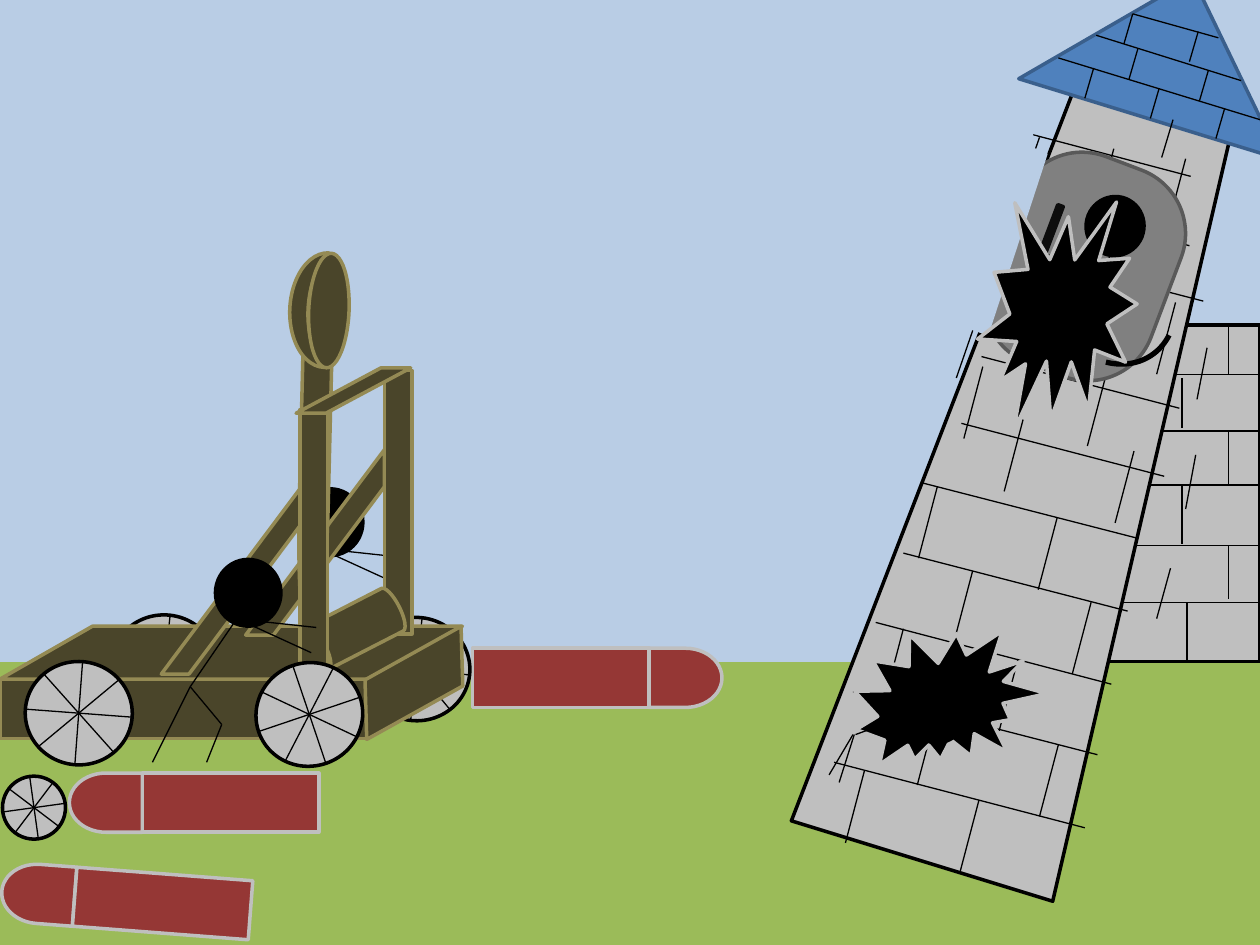
from math import cos, radians, sin

from lxml.etree import SubElement
from pptx import Presentation
from pptx.dml.color import RGBColor
from pptx.enum.shapes import MSO_CONNECTOR, MSO_SHAPE
from pptx.oxml.ns import qn
from pptx.util import Cm, Pt

COLOURS = {
    "grass": "9BBB59", "sky": "B9CDE5", "stone": "BFBFBF", "black": "000000",
    "red": "953735", "wood": "4A452A", "wood edge": "948A54",
    "roof": "4F81BD", "roof edge": "3A5F8C",
    "window": "808080", "window edge": "595959", "bar": "0D0D0D",
}

# All coordinates are in inches.
WALL_COURSES = [(8.65, 2.97), (8.65, 3.42), (8.7, 3.85), (8.7, 4.33), (8.79, 4.78)]
WALL_JOINTS = [(9.75, 2.58, 2.97), (9.38, 3, 3.4), (9.75, 3.42, 3.86),
               (9.38, 3.85, 4.32), (9.75, 4.33, 4.75), (9.42, 4.78, 5.25)]
ROOF_COURSES = [(8.4, 0.46, 10, 0.95), (8.7, 0.28, 9.85, 0.64), (8.99, 0.11, 9.67, 0.3)]
ROOF_JOINTS = [(8.68, 0.54), (9.2, 0.7), (9.72, 0.86), (9.03, 0.39),
               (9.59, 0.56), (8.99, 0.11), (9.51, 0.25)]
TOWER_COURSES = [
    (6.62, 6.05, 8.61, 6.57), (6.77, 5.49, 8.71, 5.99), (6.95, 4.94, 8.82, 5.43),
    (7.17, 4.39, 8.95, 4.85), (7.31, 3.83, 9.02, 4.27), (7.63, 3.36, 9.24, 3.78),
    (8.2, 1.07, 9.45, 1.4)]
UPPER_COURSES = [(7.59, 3, 8.25, 1.09), (7.79, 2.83, 9.36, 3.24),
                 (8.05, 2, 9.55, 2.39), (8.19, 1.62, 9.44, 1.95)]
TOWER_JOINTS = [
    (6.86, 6.12), (7.77, 6.35), (8.4, 5.91), (8.08, 5.23), (8.66, 4.78), (8.39, 4.11),
    (9, 3.58), (8.78, 2.97), (9.33, 2.4), (8.97, 1.84), (9.41, 1.26), (7.43, 5.66),
    (7.17, 4.99), (7.72, 4.53), (7.44, 3.86), (8.12, 3.33), (7.8, 2.91), (8.84, 1.18)]
CRACKS = [(9.31, 0.95, 9.22, 1.25), (9.29, 4.51, 9.18, 4.91),
          (9.49, 3.61, 9.41, 4.04), (9.58, 2.76, 9.5, 3.17)]
CAPTIVE_LIMBS = [(8.34, 2.81, 8.62, 2.47), (8.66, 2.93, 8.65, 2.48),
                 (8.65, 2.47, 8.82, 2), (8.3, 2.2, 8.69, 2.05), (8.71, 2.03, 8.79, 2.35)]
CAPTIVE_ARMS = [(8.44, 2.23, 8.79, 2.35), (8.47, 1.81, 8.44, 2.23), (8.46, 2.18, 8.42, 2.62)]
FALLEN_LIMBS = [(7.2, 5.68, 6.79, 5.83), (6.77, 5.83, 6.58, 6.15), (6.78, 5.83, 6.66, 6.21)]
SOLDIER_LIMBS = [(0, 0, -0.3, 0.6), (0, 0, 0.25, 0.3), (0.25, 0.3, 0.13, 0.6),
                 (0, 0, 0.37, -0.54), (0.37, -0.54, 0.96, -0.27), (0.35, -0.54, 1, -0.47)]


def colour(name):
    return RGBColor.from_string(COLOURS[name])


def length(inches):
    return Cm(inches * 2.54)


def add_shape(slide, kind, box, fill, edge, rotation=0, adjustments=(), weight=2):
    """Add a preset shape; a fill of None leaves it open."""
    shape = slide.shapes.add_shape(kind, *map(length, box))
    shape.shadow.inherit = False
    shape.rotation = rotation
    for index, value in enumerate(adjustments):
        shape.adjustments[index] = value
    if fill:
        shape.fill.solid()
        shape.fill.fore_color.rgb = colour(fill)
    else:
        shape.fill.background()
    shape.line.color.rgb = colour(edge)
    shape.line.width = Pt(weight)
    return shape


def add_wood(slide, kind, box, rotation=0, adjustments=()):
    add_shape(slide, kind, box, "wood", "wood edge", rotation, adjustments)


def add_lines(slide, segments):
    for segment in segments:
        line = slide.shapes.add_connector(MSO_CONNECTOR.STRAIGHT, *map(length, segment))
        line.line.color.rgb = colour("black")
        line.line.width = Pt(0.75)
        SubElement(line._element.spPr, qn("a:effectLst"))


def add_joints(slide, starts, dx, dy):
    """Add parallel joints of one length."""
    add_lines(slide, [(x, y, x + dx, y + dy) for x, y in starts])


def add_wheel(slide, left, top, width, height, rotation):
    add_shape(slide, MSO_SHAPE.OVAL, (left, top, width, height), "stone", "black", rotation)
    centre_x, centre_y, turn = left + width / 2, top + height / 2, radians(rotation)
    for angle in map(radians, (0, 45, 90, 135)):
        x, y = width / 2 * cos(angle), height / 2 * sin(angle)
        dx, dy = x * cos(turn) - y * sin(turn), x * sin(turn) + y * cos(turn)
        add_lines(slide, [(centre_x - dx, centre_y - dy, centre_x + dx, centre_y + dy)])


def add_rocket(slide, x, y, rotation):
    """Add a rocket whose body is centred on x, y."""
    nose_x = x + 0.99 * cos(radians(rotation))
    nose_y = y + 0.99 * sin(radians(rotation))
    for kind, centre_x, centre_y, width in (
            (MSO_SHAPE.FLOWCHART_DELAY, nose_x, nose_y, 0.58),
            (MSO_SHAPE.RECTANGLE, x, y, 1.4)):
        box = (centre_x - width / 2, centre_y - 0.235, width, 0.47)
        add_shape(slide, kind, box, "red", "stone", rotation)


def add_soldier(slide, x, y):
    """Add a stick figure with its hip at x, y."""
    add_lines(slide, [(x + x1, y + y1, x + x2, y + y2) for x1, y1, x2, y2 in SOLDIER_LIMBS])
    add_shape(slide, MSO_SHAPE.OVAL, (x + 0.2, y - 1.01, 0.52, 0.53), "black", "black")


def add_post(slide, x, y):
    """Add an upright post with its slanting brace."""
    add_wood(slide, MSO_SHAPE.DIAGONAL_STRIPE, (x - 1.1, y + 0.63, 1.1, 1.47), 180, [0.8])
    add_wood(slide, MSO_SHAPE.FLOWCHART_PROCESS, (x, y, 0.22, 2.09))


def add_landscape(slide):
    add_shape(slide, MSO_SHAPE.RECTANGLE, (0, 5.25, 10, 2.25), "grass", "grass")
    add_shape(slide, MSO_SHAPE.RECTANGLE, (0, 0, 10, 5.24), "sky", "sky")
    add_shape(slide, MSO_SHAPE.FLOWCHART_PROCESS, (8, 2.58, 2, 2.67), "stone", "black")
    add_lines(slide, [(x, y, 10, y) for x, y in WALL_COURSES])
    add_lines(slide, [(x, top, x, bottom) for x, top, bottom in WALL_JOINTS])


def add_catapult(slide):
    add_soldier(slide, 2.16, 4.89)
    add_wheel(slide, 2.88, 4.9, 0.85, 0.82, 186.4)
    add_wheel(slide, 0.88, 4.88, 0.85, 0.82, 186.4)
    add_wood(slide, MSO_SHAPE.FLOWCHART_PROCESS, (0, 5.39, 2.92, 0.47))
    add_wood(slide, MSO_SHAPE.FLOWCHART_DATA, (0, 4.97, 3.67, 0.42))
    add_wood(slide, MSO_SHAPE.FLOWCHART_DATA, (2.74, 5.21, 1.09, 0.42), 150.9)
    add_post(slide, 3.05, 2.94)
    add_wheel(slide, 0.2, 5.25, 0.85, 0.82, 184.3)
    add_wood(slide, MSO_SHAPE.FLOWCHART_DELAY, (1.32, 3.88, 2.34, 0.23), 91.4)
    add_wood(slide, MSO_SHAPE.MOON, (2.3, 2, 0.29, 0.91), 2.5)
    add_wood(slide, MSO_SHAPE.OVAL, (2.45, 2.01, 0.32, 0.91), 2.5)
    add_wood(slide, MSO_SHAPE.CAN, (2.63, 4.6, 0.38, 0.78), 242.8, [0.31])
    add_post(slide, 2.38, 3.25)
    add_wheel(slide, 2.03, 5.26, 0.85, 0.82, 161.3)
    add_soldier(slide, 1.51, 5.45)
    add_wood(slide, MSO_SHAPE.PARALLELOGRAM, (2.35, 2.92, 0.91, 0.36), 0, [1.87])


def add_tower(slide):
    add_shape(slide, MSO_SHAPE.FLOWCHART_MANUAL_OPERATION, (7.14, 0.8, 2.17, 6.17),
              "stone", "black", 197.1)
    add_shape(slide, MSO_SHAPE.FLOWCHART_EXTRACT, (8.21, -0.2, 2.17, 1.17),
              "roof", "roof edge", 17.1)
    add_lines(slide, ROOF_COURSES)
    add_joints(slide, ROOF_JOINTS, -0.07, 0.24)
    add_lines(slide, TOWER_COURSES)
    add_shape(slide, MSO_SHAPE.RECTANGLE, (7.6, 1, 0.33, 2), "sky", "sky", 18.6)
    add_lines(slide, UPPER_COURSES)
    add_joints(slide, TOWER_JOINTS, -0.15, 0.57)


def add_window_and_damage(slide):
    add_shape(slide, MSO_SHAPE.ROUNDED_RECTANGLE, (7.92, 1.24, 1.38, 1.75),
              "window", "window edge", 20.7, [0.39])
    add_shape(slide, MSO_SHAPE.MATH_PLUS, (8.12, 1.45, 0.29, 1.17), "bar", "bar", 20.7, [0.16])
    add_lines(slide, CRACKS + CAPTIVE_LIMBS)
    add_shape(slide, MSO_SHAPE.FLOWCHART_CONNECTOR, (8.62, 1.56, 0.46, 0.47),
              "black", "black", 14.6)
    add_shape(slide, MSO_SHAPE.RECTANGLE, (7.61, 1.11, 0.47, 1.5), "sky", "sky", 18.1)
    # Arc angles are 60000ths of a degree; adjustments count in 100000ths.
    add_shape(slide, MSO_SHAPE.ARC, (8.2, 1.82, 1.21, 0.99), None, "black", 237.3,
              [158.8 * 0.6, 215.58 * 0.6], 3)
    add_shape(slide, MSO_SHAPE.EXPLOSION2, (6.79, 4.92, 1.48, 1.27), "black", "stone", 14.6)
    add_lines(slide, CAPTIVE_ARMS)
    add_shape(slide, MSO_SHAPE.OVAL, (7.17, 5.4, 0.52, 0.47), "black", "black", 78.2)
    add_lines(slide, FALLEN_LIMBS)
    add_shape(slide, MSO_SHAPE.EXPLOSION1, (7.82, 1.52, 1.19, 1.97), "black", "stone", 14.6)


def main():
    presentation = Presentation()
    presentation.slide_width, presentation.slide_height = Cm(25.4), Cm(19.05)
    slide = presentation.slides.add_slide(presentation.slide_layouts[6])
    add_landscape(slide)
    add_rocket(slide, 1.83, 6.37, 180)
    add_wheel(slide, 0.02, 6.16, 0.5, 0.5, 352.1)
    add_rocket(slide, 1.29, 7.17, 184.4)
    add_rocket(slide, 4.45, 5.38, 0)
    add_catapult(slide)
    add_tower(slide)
    add_window_and_damage(slide)
    presentation.save("out.pptx")


if __name__ == "__main__":
    main()
